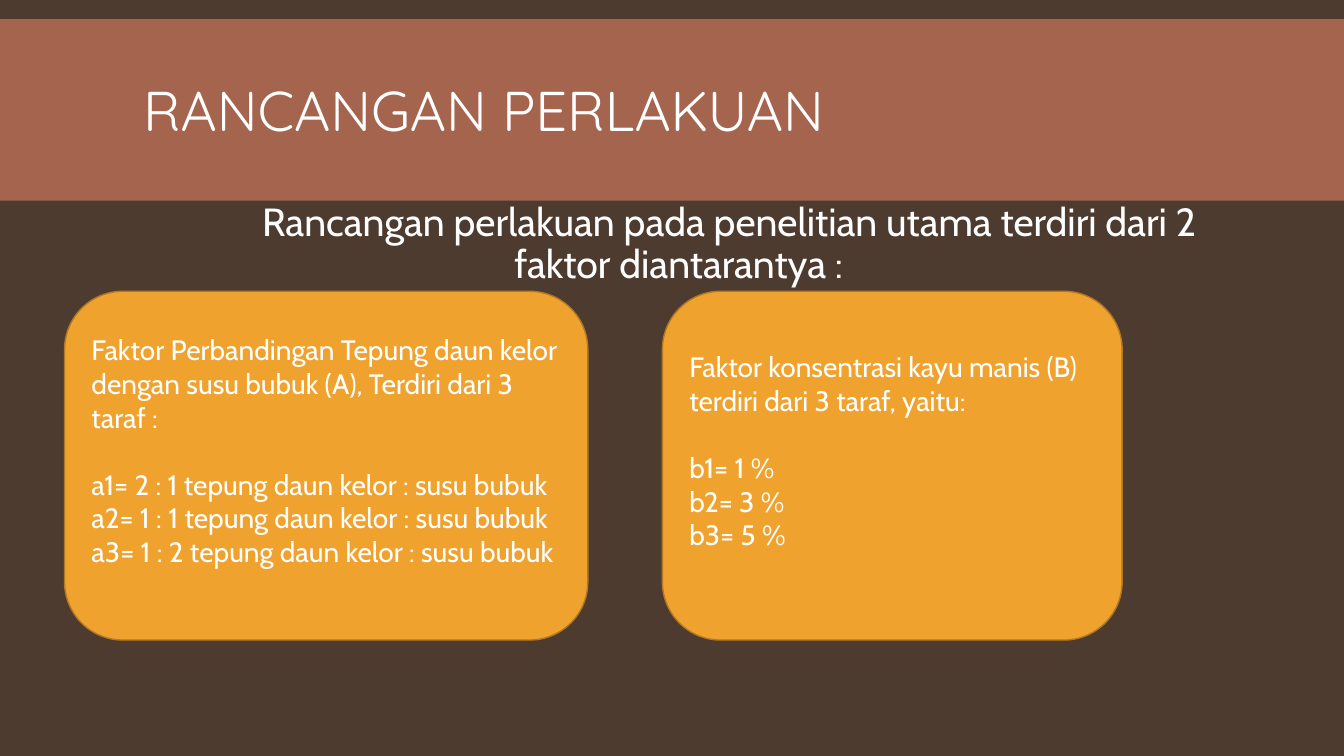
from dataclasses import dataclass

import lxml.etree
import pptx
import pptx.dml.color
import pptx.enum.shapes
import pptx.enum.text
import pptx.oxml.ns
import pptx.slide
import pptx.text.text
import pptx.util

Inches = pptx.util.Inches
Pt = pptx.util.Pt
RGBColor = pptx.dml.color.RGBColor
Shape = pptx.enum.shapes.MSO_SHAPE
Align = pptx.enum.text.PP_ALIGN
Anchor = pptx.enum.text.MSO_ANCHOR


@dataclass(frozen=True)
class Theme:
    background: RGBColor = RGBColor.from_string("4E3B30")
    band: RGBColor = RGBColor.from_string("A5644E")
    card: RGBColor = RGBColor.from_string("F0A22E")
    card_line: RGBColor = RGBColor.from_string("B27822")
    text: RGBColor = RGBColor.from_string("FFFFFF")
    title_font: str = "Quicksand"
    body_font: str = "Cabin"
    title_size: int = 40
    body_size: int = 28
    card_size: int = 20


@dataclass(frozen=True)
class FactorCard:
    left: float
    width: float
    heading: str
    levels: tuple[str, ...]


THEME = Theme()
CARD_TOP, CARD_HEIGHT = 2.89, 3.46
CARDS = (
    FactorCard(
        0.64, 5.19,
        "Faktor Perbandingan Tepung daun kelor dengan susu bubuk (A), Terdiri dari 3 taraf :",
        (
            "a1= 2 : 1 tepung daun kelor : susu bubuk",
            "a2= 1 : 1 tepung daun kelor : susu bubuk",
            "a3= 1 : 2 tepung daun kelor : susu bubuk",
        ),
    ),
    FactorCard(
        6.57, 4.56,
        "Faktor konsentrasi kayu manis (B) terdiri dari 3 taraf, yaitu:",
        ("b1= 1 %", "b2= 3 %", "b3= 5 %"),
    ),
)


def style_paragraph(para: pptx.text.text._Paragraph, font: str, size: int, align: Align) -> None:
    para.alignment = align
    para.font.name = font
    para.font.size = Pt(size)
    para.font.color.rgb = THEME.text


def place(shape, left: float, top: float, width: float, height: float) -> None:
    shape.left, shape.top = Inches(left), Inches(top)
    shape.width, shape.height = Inches(width), Inches(height)


def add_band(page: pptx.slide.Slide) -> None:
    """Draw the title band behind the placeholders."""
    band = page.shapes.add_shape(
        Shape.RECTANGLE, 0, Inches(0.19), Inches(13.33), Inches(1.8)
    )
    band.shadow.inherit = False
    band.fill.solid()
    band.fill.fore_color.rgb = THEME.band
    band.line.fill.background()
    page.shapes._spTree.insert(2, band._element)


def fill_title(page: pptx.slide.Slide, text: str) -> None:
    title = page.shapes.title
    place(title, 1.32, 0.31, 10.7, 1.65)
    frame = title.text_frame
    frame.text = text
    frame.auto_size = pptx.enum.text.MSO_AUTO_SIZE.NONE
    frame.vertical_anchor = Anchor.MIDDLE
    para = frame.paragraphs[0]
    para.line_spacing = 0.85
    style_paragraph(para, THEME.title_font, THEME.title_size, Align.LEFT)


def fill_body(page: pptx.slide.Slide, text: str) -> None:
    body = page.placeholders[1]
    place(body, 1.32, 1.96, 10.7, 4.84)
    frame = body.text_frame
    frame.text = text
    frame.auto_size = pptx.enum.text.MSO_AUTO_SIZE.NONE
    frame.vertical_anchor = Anchor.TOP
    para = frame.paragraphs[0]
    para.line_spacing = 0.9
    para.space_before, para.space_after = Pt(12), Pt(2)
    properties = para._p.get_or_add_pPr()
    properties.set("marL", str(Inches(0.12)))
    properties.set("indent", str(Inches(1)))
    lxml.etree.SubElement(properties, pptx.oxml.ns.qn("a:buNone"))
    style_paragraph(para, THEME.body_font, THEME.body_size, Align.CENTER)


def add_card(page: pptx.slide.Slide, card: FactorCard) -> None:
    box = page.shapes.add_shape(
        Shape.FLOWCHART_ALTERNATE_PROCESS,
        Inches(card.left), Inches(CARD_TOP), Inches(card.width), Inches(CARD_HEIGHT),
    )
    box.shadow.inherit = False
    box.fill.solid()
    box.fill.fore_color.rgb = THEME.card
    box.line.color.rgb = THEME.card_line
    box.line.width = Pt(1)
    frame = box.text_frame
    frame.word_wrap = True
    frame.vertical_anchor = Anchor.MIDDLE
    frame.margin_bottom = Inches(0.35)
    frame.text = "\n".join((card.heading, *card.levels))
    for para in frame.paragraphs:
        style_paragraph(para, THEME.body_font, THEME.card_size, Align.LEFT)
    frame.paragraphs[0].space_after = Pt(24)


def main() -> None:
    deck = pptx.Presentation()
    deck.slide_width, deck.slide_height = Inches(13.33), Inches(7.5)
    page = deck.slides.add_slide(deck.slide_layouts.get_by_name("Title and Content"))
    page.background.fill.solid()
    page.background.fill.fore_color.rgb = THEME.background
    add_band(page)
    fill_title(page, "RANCANGAN PERLAKUAN")
    fill_body(
        page,
        "Rancangan perlakuan pada penelitian utama terdiri dari 2 faktor diantarantya :",
    )
    for card in CARDS:
        add_card(page, card)
    deck.save("out.pptx")


if __name__ == "__main__":
    main()
